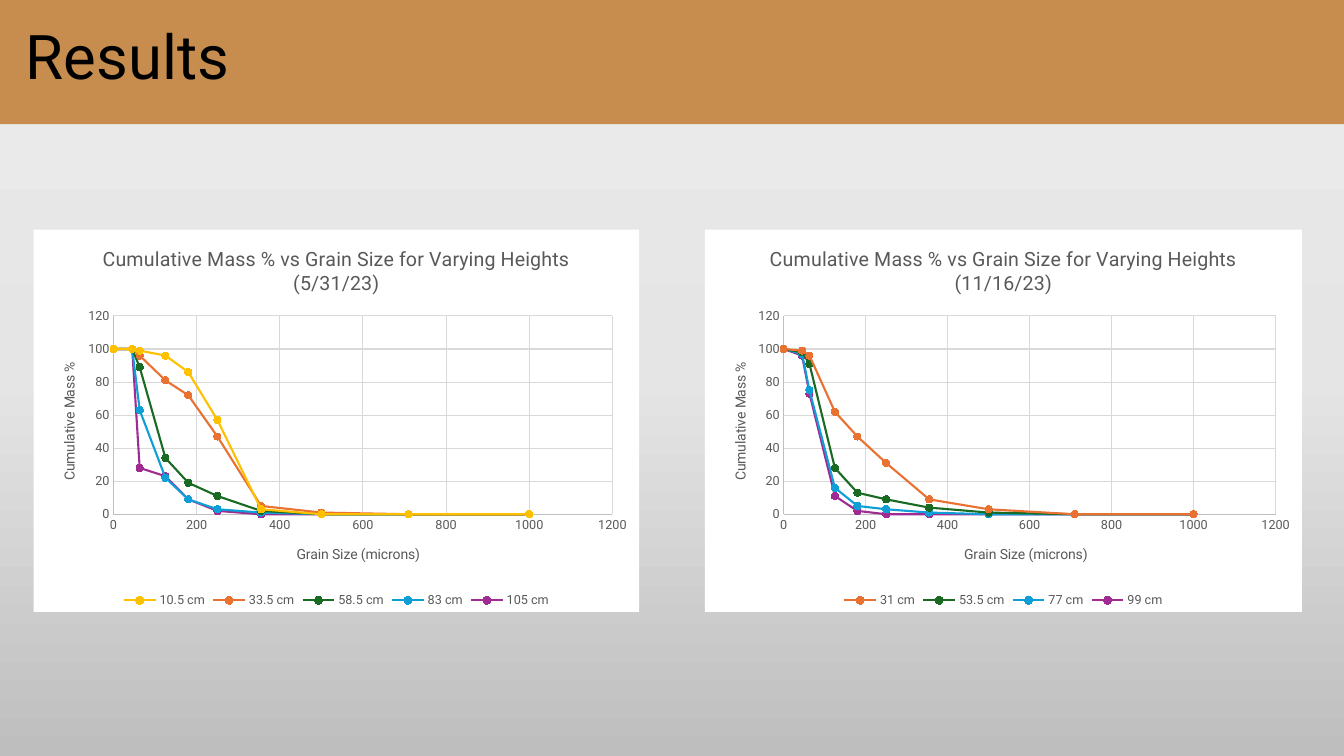
import copy
import pptx
import pptx.util
import pptx.chart.data
import pptx.dml.color
import pptx.enum.chart
import pptx.enum.shapes
import pptx.enum.text
import pptx.oxml
import pptx.oxml.ns

Pt = pptx.util.Pt
qn = pptx.oxml.ns.qn
kinds = pptx.enum.chart
FACE = "Roboto"
GREY = "595959"
SIZES = [1000, 710, 500, 355, 250, 180, 125, 63, 45, 0]
YELLOW, ORANGE, GREEN, BLUE, PURPLE = "FFC000", "E97132", "196B24", "0F9ED5", "A02B93"

MAY = [
    ("10.5 cm", YELLOW, [0, 0, 0, 3, 57, 86, 96, 99, 100, 100]),
    ("33.5 cm", ORANGE, [0, 0, 1, 5, 47, 72, 81, 96, 100, 100]),
    ("58.5 cm", GREEN, [0, 0, 0, 2, 11, 19, 34, 89, 100, 100]),
    ("83 cm", BLUE, [0, 0, 0, 1, 3, 9, 22, 63, 100, 100]),
    ("105 cm", PURPLE, [0, 0, 0, 0, 2, 9, 23, 28, 100, 100]),
]
NOVEMBER = [
    ("31 cm", ORANGE, [0, 0, 3, 9, 31, 47, 62, 96, 99, 100]),
    ("53.5 cm", GREEN, [0, 0, 1, 4, 9, 13, 28, 91, 98, 100]),
    ("77 cm", BLUE, [0, 0, 0, 1, 3, 5, 16, 75, 97, 100]),
    ("99 cm", PURPLE, [0, 0, 0, 0, 0, 2, 11, 73, 96, 100]),
]


def color(code):
    return pptx.dml.color.RGBColor.from_string(code)


def assign(target, values):
    for name, value in values.items():
        setattr(target, name, value)


def ink(font, size, code=GREY):
    assign(font, {"name": FACE, "size": Pt(size), "bold": False})
    font.color.rgb = color(code)


def paint(fill, code):
    fill.solid()
    fill.fore_color.rgb = color(code)


def stroke(line, code, width):
    line.width = Pt(width)
    paint(line.fill, code)


def label(frame, lines, size):
    frame.text = "\n".join(lines)
    for para in frame.paragraphs:
        ink(para.runs[0].font, size)


def place(node, index, **spots):
    """Give a chart part a fixed place, in shares of the chart."""
    old = node.find(qn("c:layout"))
    if old is not None:
        node.remove(old)
    layout = pptx.oxml.parse_xml(
        f'<c:layout {pptx.oxml.ns.nsdecls("c")}><c:manualLayout/></c:layout>')
    for tag, value in spots.items():
        item = layout[0].makeelement(qn("c:" + tag), {"val": str(value)})
        layout[0].append(item)
    node.insert(index, layout)


def backdrop(slide):
    fill = slide.background.fill
    fill.gradient()
    fill.gradient_angle = 270
    stops = slide.background._cSld.find(".//" + qn("a:gsLst"))
    stops.append(copy.deepcopy(stops[-1]))
    shades = [(0, "ECECEC"), (0.5, "E5E5E5"), (1, "BEBEBE")]
    for stop, (where, code) in zip(fill.gradient_stops, shades):
        stop.position = where
        stop.color.rgb = color(code)


def header(slide, left, top, width, height):
    # Colour band
    band = slide.shapes.add_shape(pptx.enum.shapes.MSO_SHAPE.RECTANGLE,
                                  Pt(left), Pt(top), Pt(width), Pt(height))
    band.shadow.inherit = False
    paint(band.fill, "C78D4E")
    band.line.fill.background()
    # Heading
    box = slide.shapes.add_textbox(Pt(left + 18), Pt(top), Pt(828), Pt(height))
    frame = box.text_frame
    assign(frame, {"word_wrap": True,
                   "vertical_anchor": pptx.enum.text.MSO_ANCHOR.MIDDLE})
    para = frame.paragraphs[0]
    para.text = "Results"
    para.line_spacing = 0.9
    ink(para.runs[0].font, 44, "000000")


def axis_style(axis, text, top, step):
    assign(axis, {"minimum_scale": 0, "maximum_scale": top, "major_unit": step,
                  "has_major_gridlines": True,
                  "major_tick_mark": kinds.XL_TICK_MARK.NONE,
                  "minor_tick_mark": kinds.XL_TICK_MARK.NONE})
    stroke(axis.format.line, "BFBFBF", 0.75)
    stroke(axis.major_gridlines.format.line, "D9D9D9", 0.75)
    ink(axis.tick_labels.font, 9)
    label(axis.axis_title.text_frame, [text], 10)


def curves(slide, left, top, width, height, date, rows):
    data = pptx.chart.data.XyChartData()
    for name, _, shares in rows:
        series = data.add_series(name)
        for size, share in zip(SIZES, shares):
            series.add_data_point(size, share)
    chart = slide.shapes.add_chart(kinds.XL_CHART_TYPE.XY_SCATTER_SMOOTH, Pt(left),
                                   Pt(top), Pt(width), Pt(height), data).chart
    ink(chart.font, 10, "000000")

    # White panel
    panel = pptx.oxml.parse_xml(
        f'<c:spPr {pptx.oxml.ns.nsdecls("c", "a")}><a:solidFill>'
        '<a:srgbClr val="FFFFFF"/></a:solidFill><a:ln><a:noFill/></a:ln></c:spPr>')
    space = chart._chartSpace
    space.find(qn("c:txPr")).addprevious(panel)

    # Title and legend
    label(chart.chart_title.text_frame,
          ["Cumulative Mass % vs Grain Size for Varying Heights", f"({date})"], 14)
    chart.has_legend = True
    assign(chart.legend, {"position": kinds.XL_LEGEND_POSITION.BOTTOM,
                          "include_in_layout": False})
    ink(chart.legend.font, 9)

    # Axes and plot area
    across, up = chart.category_axis, chart.value_axis
    axis_style(across, "Grain Size (microns)", 1200, 200)
    axis_style(up, "Cumulative Mass %", 120, 20)
    turn = up.axis_title.text_frame._txBody.find(qn("a:bodyPr"))
    turn.set("rot", "-5400000")
    fixed = {"xMode": "edge", "yMode": "edge"}
    place(across.axis_title._element, 1, **fixed, x=0.43, y=0.82)
    place(up.axis_title._element, 1, **fixed, x=0.04, y=0.34)
    place(space.find(".//" + qn("c:plotArea")), 0, layoutTarget="inner", **fixed,
          x=0.132, y=0.226, w=0.824, h=0.519)

    # Curves
    chart.plots[0].vary_by_categories = False
    for series, (_, code, _) in zip(chart.plots[0].series, rows):
        series.smooth = True
        stroke(series.format.line, code, 1.5)
        mark = series.marker
        assign(mark, {"style": kinds.XL_MARKER_STYLE.CIRCLE, "size": 5})
        paint(mark.format.fill, code)
        stroke(mark.format.line, code, 0.75)


def main():
    deck = pptx.Presentation()
    assign(deck, {"slide_width": Pt(960), "slide_height": Pt(540)})
    slide = deck.slides.add_slide(deck.slide_layouts[6])
    backdrop(slide)
    header(slide, -6.5, -4.3, 977, 93)
    curves(slide, 24, 164, 432.5, 273, "5/31/23", MAY)
    curves(slide, 503.5, 164, 426.5, 273, "11/16/23", NOVEMBER)
    deck.save("out.pptx")


if __name__ == "__main__":
    main()
